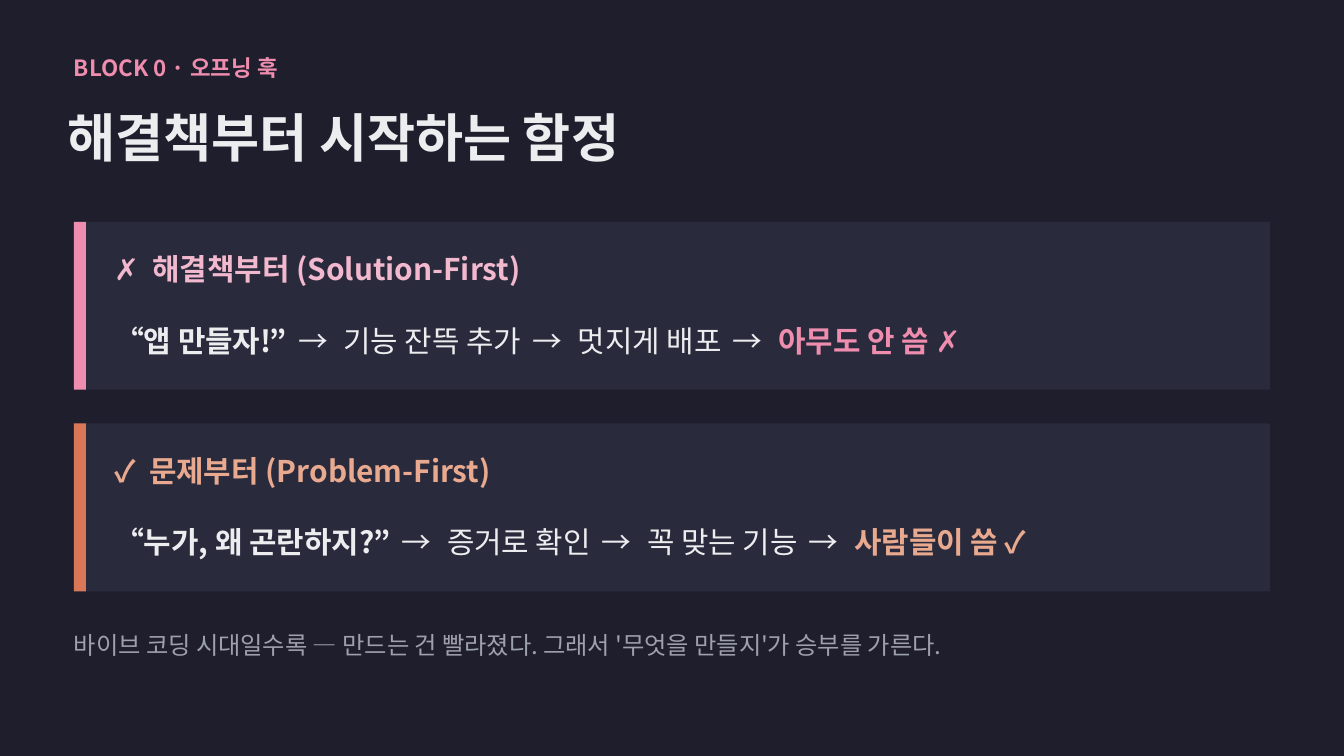
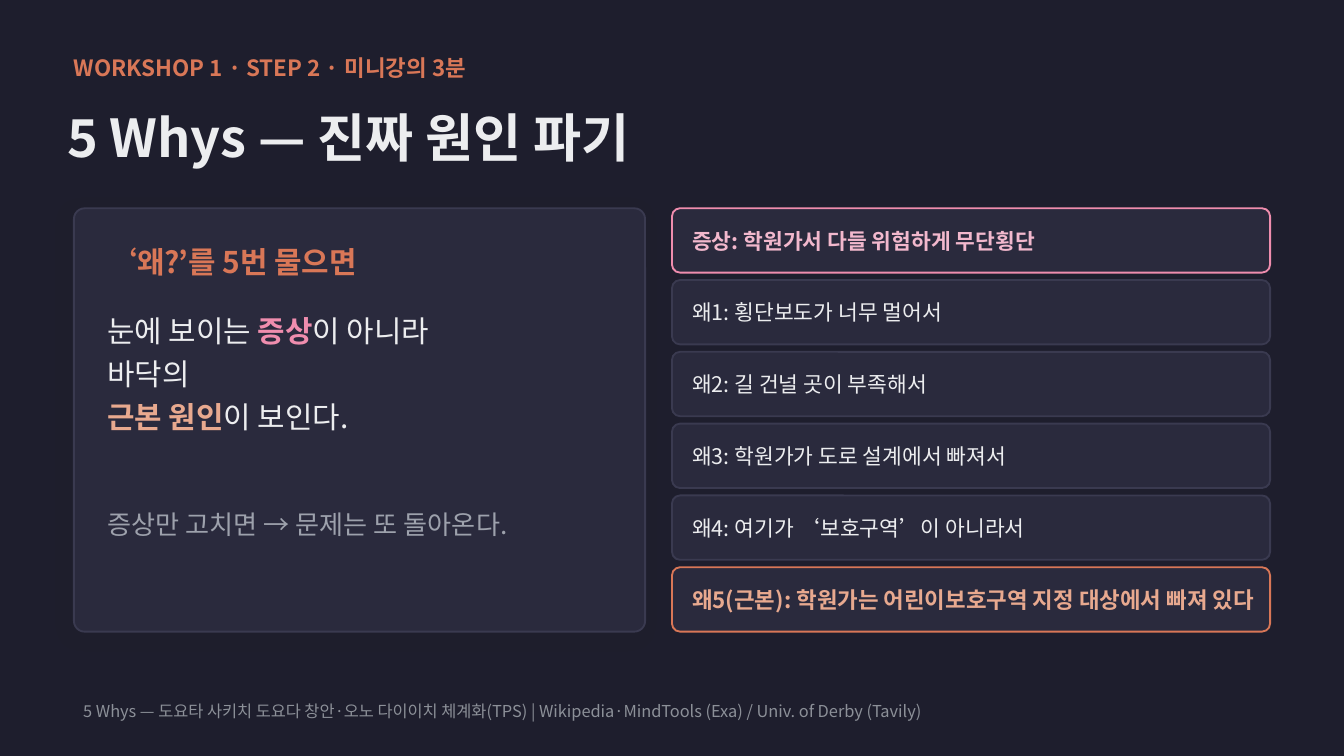
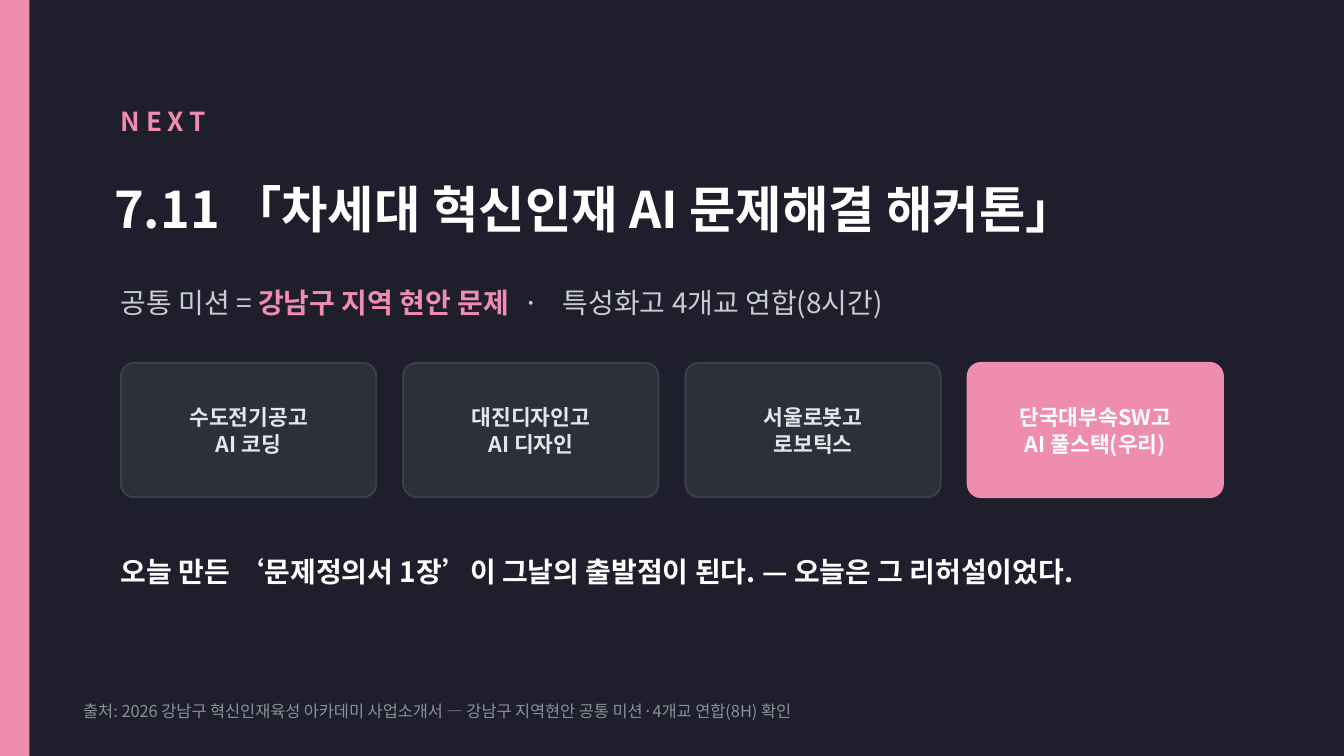
from collections import namedtuple

from lxml import etree
from pptx import Presentation
from pptx.dml.color import RGBColor
from pptx.enum.shapes import MSO_SHAPE
from pptx.enum.text import MSO_ANCHOR, PP_ALIGN
from pptx.oxml.ns import qn
from pptx.util import Pt

RECT, ROUNDED = MSO_SHAPE.RECTANGLE, MSO_SHAPE.ROUNDED_RECTANGLE
MIDDLE = MSO_ANCHOR.MIDDLE
LEFT, CENTER = PP_ALIGN.LEFT, PP_ALIGN.CENTER

# Shared look
WIDTH, HEIGHT = 720, 405
FONT = "Noto Sans CJK KR"
NIGHT, PANEL, PANEL_EDGE = "1E1E2D", "2A2A3D", "3A3A50"
PINK, PALE_PINK = "EF8DAE", "F2B8CD"
ORANGE, PALE_ORANGE = "D97757", "E8A98F"
INK, WHITE, MUTED = "ECEDEF", "FFFFFF", "9DA1AC"
SOURCE_GRAY, SUBTITLE_GRAY = "8C9098", "C9CCD2"
SCHOOL_FILL, SCHOOL_EDGE, SCHOOL_INK = "2C3038", "3C4049", "E4E6EA"
SHADOW = "20242C"
MARGIN, CONTENT_WIDTH = 39.6, 640.8

# spacing is extra space after each character, in points
Run = namedtuple("Run", "text color bold spacing", defaults=(INK, False, 0))
ARROW = Run(" → ", spacing=2.4)


def rgb(value):
    return RGBColor.from_string(value)


def new_slide(prs):
    slide = prs.slides.add_slide(prs.slide_layouts[6])
    slide.background.fill.solid()
    slide.background.fill.fore_color.rgb = rgb(NIGHT)
    return slide


def add_text(slide, box, size, paragraphs, align=LEFT, line_spacing=None):
    """Write paragraphs, each a list of runs, in a box without insets."""
    frame = slide.shapes.add_textbox(*map(Pt, box)).text_frame
    frame.word_wrap = True
    frame.vertical_anchor = MIDDLE
    frame.margin_left = frame.margin_right = 0
    frame.margin_top = frame.margin_bottom = 0
    for index, runs in enumerate(paragraphs):
        paragraph = frame.paragraphs[0] if index == 0 else frame.add_paragraph()
        paragraph.alignment = align
        if line_spacing:
            paragraph.line_spacing = line_spacing
        for part in runs:
            run = paragraph.add_run()
            run.text = part.text
            run.font.size = Pt(size)
            run.font.bold = part.bold
            run.font.name = FONT
            run.font.color.rgb = rgb(part.color)
            properties = run.font._element
            etree.SubElement(properties, qn("a:ea")).set("typeface", FONT)
            if part.spacing:
                properties.set("spc", str(round(part.spacing * 100)))


def add_panel(slide, box, fill, edge=None, radius=0, shadow=False):
    panel = slide.shapes.add_shape(ROUNDED if radius else RECT, *map(Pt, box))
    panel.shadow.inherit = False
    panel.fill.solid()
    panel.fill.fore_color.rgb = rgb(fill)
    if radius:
        panel.adjustments[0] = radius / min(box[2:])
    if edge:
        panel.line.color.rgb = rgb(edge)
        panel.line.width = Pt(1)
    else:
        panel.line.fill.background()
    if shadow:
        effects = panel._element.spPr.find(qn("a:effectLst"))
        outer = etree.SubElement(effects, qn("a:outerShdw"), blurRad=str(Pt(9)),
                                 dist=str(Pt(3)), dir=str(135 * 60000),
                                 algn="bl", rotWithShape="0")
        color = etree.SubElement(outer, qn("a:srgbClr"), val=SHADOW)
        etree.SubElement(color, qn("a:alpha"), val="10000")


def add_header(slide, kicker, title, accent):
    add_text(slide, (MARGIN, 24.5, 648, 23), 12, [[Run(kicker, accent, True)]])
    add_text(slide, (36, 44.6, 648, 57.6), 28, [[Run(title, INK, True)]])


def add_source(slide, text):
    add_text(slide, (44.6, 372.2, 630, 17.3), 8.8, [[Run(text, SOURCE_GRAY)]])


# Slide 1: two approaches
def add_approach(slide, box, accent, tint, mark, heading, steps, outcome, outcome_color):
    left, top, width, height = box
    add_panel(slide, box, PANEL, shadow=True)
    add_panel(slide, (left, top, 6.5, height), accent)
    text_left, text_width = left + 21.6, width - 36
    add_text(slide, (text_left, top + 10.8, text_width, 28.8), 16,
             [[Run(mark + " ", tint, True, 1.8), Run(heading, tint, True)]])
    chain = [Run(steps[0], INK, True), ARROW]
    for step in steps[1:]:
        chain += [Run(step), ARROW]
    chain.append(Run(outcome, outcome_color, True))
    add_text(slide, (text_left, top + 45.4, text_width, 36), 16, [chain])


def build_trap_slide(prs):
    slide = new_slide(prs)
    add_header(slide, "BLOCK 0 · 오프닝 훅", "해결책부터 시작하는 함정", PINK)
    approaches = [
        (PINK, PALE_PINK, "✗", "해결책부터 (Solution-First)",
         ["“앱 만들자!”", "기능 잔뜩 추가", "멋지게 배포"], "아무도 안 씀 ✗", PINK),
        (ORANGE, PALE_ORANGE, "✓", "문제부터 (Problem-First)",
         ["“누가, 왜 곤란하지?”", "증거로 확인", "꼭 맞는 기능"], "사람들이 씀 ✓", PALE_ORANGE),
    ]
    for row, approach in enumerate(approaches):
        add_approach(slide, (MARGIN, 118.8 + 108 * row, CONTENT_WIDTH, 90), *approach)
    add_text(slide, (MARGIN, 331.2, CONTENT_WIDTH, 28.8), 13, [[Run(
        "바이브 코딩 시대일수록 — 만드는 건 빨라졌다. 그래서 '무엇을 만들지'가 승부를 가른다.",
        MUTED)]])


# Slide 2: five whys
def add_insight(slide, box):
    left, top, width, _ = box
    add_panel(slide, box, PANEL, PANEL_EDGE, radius=5.7, shadow=True)
    text_left, text_width = left + 18, width - 32.4
    add_text(slide, (text_left, top + 14.4, text_width, 28.8), 16,
             [[Run("‘왜?’를 5번 물으면", ORANGE, True)]])
    add_text(slide, (text_left, top + 50.4, text_width, 72), 16, [
        [Run("눈에 보이는 "), Run("증상", PINK, True), Run("이 아니라")],
        [Run("바닥의")],
        [Run("근본 원인", PALE_ORANGE, True), Run("이 보인다.")],
    ], line_spacing=1.2)
    add_text(slide, (text_left, top + 140.4, text_width, 57.6), 14,
             [[Run("증상만 고치면 → 문제는 또 돌아온다.", MUTED)]])


def add_why_ladder(slide, box, rungs, gap=4):
    left, top, width, height = box
    rung_height = (height - gap * (len(rungs) - 1)) / len(rungs)
    for row, (edge, size, label) in enumerate(rungs):
        rung_top = top + row * (rung_height + gap)
        add_panel(slide, (left, rung_top, width, rung_height), PANEL, edge, radius=4.3)
        add_text(slide, (left + 10.8, rung_top, width - 18, rung_height), size, [[label]])


def build_whys_slide(prs):
    slide = new_slide(prs)
    add_header(slide, "WORKSHOP 1 · STEP 2 · 미니강의 3분", "5 Whys — 진짜 원인 파기", ORANGE)
    add_insight(slide, (MARGIN, 111.6, 306, 226.8))
    whys = ["횡단보도가 너무 멀어서", "길 건널 곳이 부족해서",
            "학원가가 도로 설계에서 빠져서", "여기가 ‘보호구역’이 아니라서"]
    symptom = Run("증상: 학원가서 다들 위험하게 무단횡단", PALE_PINK, True)
    root = Run("왜5(근본): 학원가는 어린이보호구역 지정 대상에서 빠져 있다", PALE_ORANGE, True)
    rungs = [(PINK, 11.5, symptom)]
    rungs += [(PANEL_EDGE, 11.5, Run(f"왜{n}: {why}")) for n, why in enumerate(whys, 1)]
    rungs.append((ORANGE, 12, root))
    add_why_ladder(slide, (360, 111.6, 320.4, 226.8), rungs)
    add_source(slide, "5 Whys — 도요타 사키치 도요다 창안·오노 다이이치 체계화(TPS) | "
                      "Wikipedia·MindTools (Exa) / Univ. of Derby (Tavily)")


# Slide 3: next event
def add_school(slide, box, school, field, ours):
    left, top, width, height = box
    fill, edge, ink = (PINK, PINK, WHITE) if ours else (SCHOOL_FILL, SCHOOL_EDGE, SCHOOL_INK)
    add_panel(slide, box, fill, edge, radius=7.2)
    add_text(slide, (left + 3.6, top, width - 7.2, height), 11.5,
             [[Run(line, ink, True)] for line in (school, field)], CENTER, 1.05)


def build_next_slide(prs):
    slide = new_slide(prs)
    left = 64.8
    add_panel(slide, (0, 0, 15.8, HEIGHT), PINK)
    add_text(slide, (left, 50.4, 576, 28.8), 14, [[Run("NEXT", PINK, True, 3)]])
    add_text(slide, (61.2, 79.2, 619.2, 64.8), 27,
             [[Run("7.11 「차세대 혁신인재 AI 문제해결 해커톤」", WHITE, True)]])
    add_text(slide, (left, 144, 612, 36), 15, [[
        Run("공통 미션 = ", SUBTITLE_GRAY),
        Run("강남구 지역 현안 문제", PINK, True),
        Run(" · ", SUBTITLE_GRAY, spacing=4.5),
        Run("특성화고 4개교 연합(8시간)", SUBTITLE_GRAY),
    ]])
    schools = [("수도전기공고", "AI 코딩", False), ("대진디자인고", "AI 디자인", False),
               ("서울로봇고", "로보틱스", False), ("단국대부속SW고", "AI 풀스택(우리)", True)]
    for column, school in enumerate(schools):
        add_school(slide, (left + 151.2 * column, 194.4, 136.8, 72), *school)
    add_text(slide, (left, 288, 612, 36), 15, [[Run(
        "오늘 만든 ‘문제정의서 1장’이 그날의 출발점이 된다. — 오늘은 그 리허설이었다.",
        WHITE, True)]])
    add_source(slide, "출처: 2026 강남구 혁신인재육성 아카데미 사업소개서 — "
                      "강남구 지역현안 공통 미션·4개교 연합(8H) 확인")


def main():
    prs = Presentation()
    prs.slide_width, prs.slide_height = Pt(WIDTH), Pt(HEIGHT)
    build_trap_slide(prs)
    build_whys_slide(prs)
    build_next_slide(prs)
    prs.save("out.pptx")


if __name__ == "__main__":
    main()
